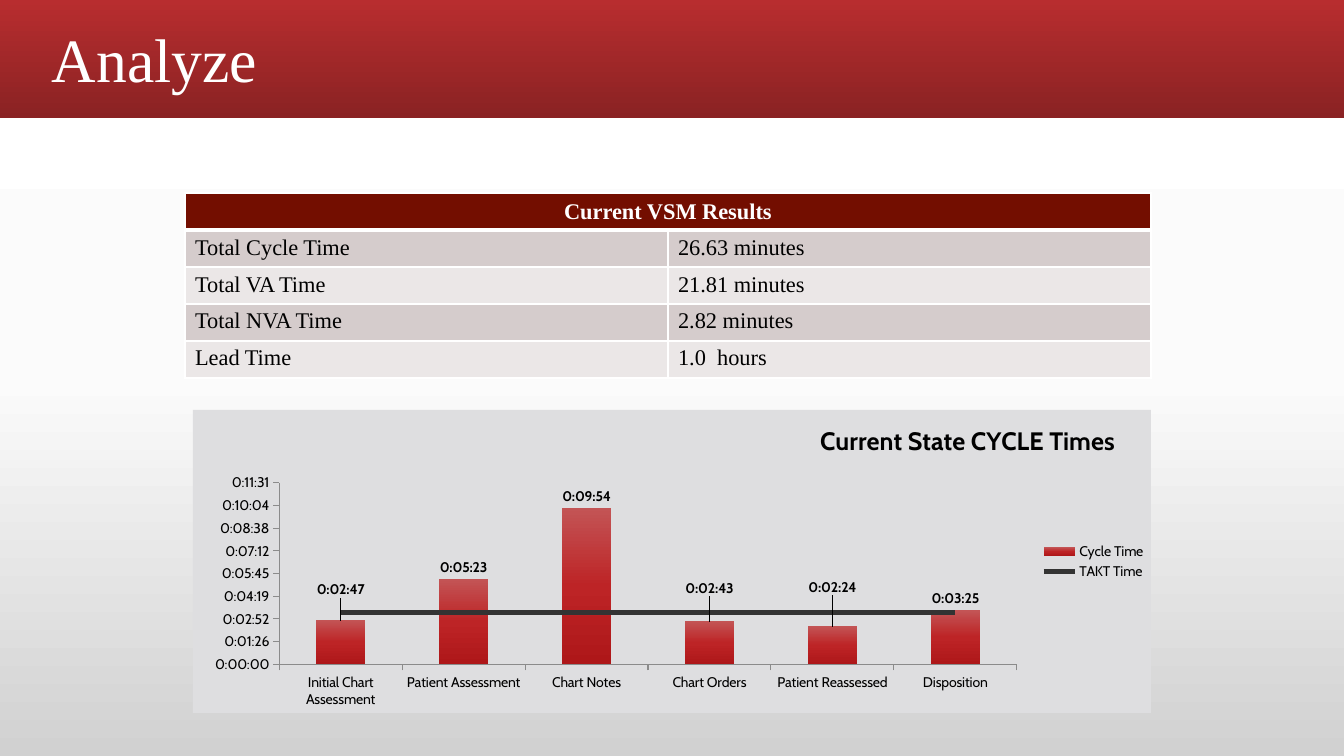
from dataclasses import dataclass

from pptx import Presentation
from pptx.chart.data import CategoryChartData
from pptx.dml.color import RGBColor
from pptx.enum.chart import XL_CHART_TYPE as ChartType
from pptx.enum.chart import XL_LABEL_POSITION as LabelPosition
from pptx.enum.chart import XL_LEGEND_POSITION as LegendPosition
from pptx.enum.chart import XL_MARKER_STYLE as MarkerStyle
from pptx.enum.chart import XL_TICK_MARK as TickMark
from pptx.enum.shapes import MSO_SHAPE as Preset
from pptx.enum.text import MSO_ANCHOR as Anchor
from pptx.enum.text import PP_ALIGN as Align
from pptx.oxml import parse_xml
from pptx.oxml.ns import nsdecls, qn
from pptx.util import Emu, Pt

SERIF = "Times New Roman"
SANS = "Cabin"
TIME_FORMAT = "h:mm:ss;@"
TAKT = 0.0023


@dataclass(frozen=True)
class Result:
    measure: str
    value: str
    band: str


@dataclass(frozen=True)
class Step:
    name: str
    cycle: float
    label_lift: float = 0


RESULTS = [
    Result("Total Cycle Time", "26.63 minutes", "D5CCCC"),
    Result("Total VA Time", "21.81 minutes", "EBE7E7"),
    Result("Total NVA Time", "2.82 minutes", "D5CCCC"),
    Result("Lead Time", "1.0  hours", "EBE7E7"),
]
STEPS = [
    Step("Initial Chart Assessment", 0.001944, 0.06),
    Step("Patient Assessment", 0.003743),
    Step("Chart Notes", 0.006878),
    Step("Chart Orders", 0.001887, 0.07),
    Step("Patient Reassessed", 0.00167, 0.09),
    Step("Disposition", 0.002377),
]


def px(length: int) -> Emu:
    return Emu(round(length * 914400 / 100.8))


def color(code: str) -> RGBColor:
    return RGBColor.from_string(code)


def paint_gradient(fill, owner, *stops: tuple[int, str]) -> None:
    fill.gradient()
    fill.gradient_angle = 270
    stop_list = next(owner.iter(qn("a:gsLst")))
    for old in list(stop_list):
        stop_list.remove(old)
    for percent, code in stops:
        stop_list.append(parse_xml(
            f'<a:gs {nsdecls("a")} pos="{percent * 1000}"><a:srgbClr val="{code}"/></a:gs>'))


def style_font(font, size: int, face: str, code: str = "000000", bold: bool = False) -> None:
    font.size = Pt(size)
    font.name = face
    font.bold = bold
    font.color.rgb = color(code)


def write(frame, text: str, *, size: int, face: str = SERIF, code: str = "000000",
          bold: bool = False, align=None, spacing=None) -> None:
    paragraph = frame.paragraphs[0]
    paragraph.alignment = align
    paragraph.line_spacing = spacing
    run = paragraph.add_run()
    run.text = text
    style_font(run.font, size, face, code, bold)


def place(element, index: int, **edges: float) -> None:
    for old in element.findall(qn("c:layout")):
        element.remove(old)
    is_plot = element.tag == qn("c:plotArea")
    target = '<c:layoutTarget val="inner"/>' if is_plot else ""
    is_label = element.tag == qn("c:dLbl")
    modes = "" if is_label else '<c:xMode val="edge"/><c:yMode val="edge"/>'
    values = "".join(f'<c:{edge} val="{value}"/>' for edge, value in edges.items())
    element.insert(index, parse_xml(
        f'<c:layout {nsdecls("c")}><c:manualLayout>{target}{modes}{values}'
        f'</c:manualLayout></c:layout>'))


def border(cell, **widths: int) -> None:
    properties = cell._tc.get_or_add_tcPr()
    for index, side in enumerate("LRTB"):
        width = Pt(widths.get(side, 1))
        properties.insert(index, parse_xml(
            f'<a:ln{side} {nsdecls("a")} w="{width}"><a:solidFill>'
            f'<a:srgbClr val="FFFFFF"/></a:solidFill></a:ln{side}>'))


def fill_cell(cell, code: str, **widths: int) -> None:
    cell.fill.solid()
    cell.fill.fore_color.rgb = color(code)
    border(cell, **widths)


def add_header(slide) -> None:
    banner = slide.shapes.add_shape(Preset.RECTANGLE, 0, 0, px(1344), px(118))
    banner.shadow.inherit = False
    banner.line.fill.background()
    paint_gradient(banner.fill, banner.element, (0, "B82D2F"), (100, "8A2223"))
    heading = slide.shapes.add_textbox(px(42), px(11), px(1184), px(90)).text_frame
    heading.word_wrap = True
    heading.vertical_anchor = Anchor.BOTTOM
    write(heading, "Analyze", size=44, code="FFFFFF", spacing=0.9)


def add_results(slide) -> None:
    rows = len(RESULTS) + 1
    results = slide.shapes.add_table(rows, 2, px(185), px(193), px(966), px(37 * rows)).table
    results.first_row = results.horz_banding = False
    heading = results.cell(0, 0)
    heading.merge(results.cell(0, 1))
    heading.vertical_anchor = Anchor.MIDDLE
    for column in range(2):
        fill_cell(results.cell(0, column), "730E00", B=3)
    write(heading.text_frame, "Current VSM Results", size=16, code="FFFFFF",
          bold=True, align=Align.CENTER)
    for row, result in enumerate(RESULTS, 1):
        for column, text in enumerate((result.measure, result.value)):
            cell = results.cell(row, column)
            fill_cell(cell, result.band, T=3 if row == 1 else 1)
            write(cell.text_frame, text, size=16)


def split_takt_line(chart) -> None:
    bars = next(chart.element.iter(qn("c:barChart")))
    takt = bars.findall(qn("c:ser"))[1]
    for bar_only in takt.findall(qn("c:invertIfNegative")):
        takt.remove(bar_only)
    line = parse_xml(
        f'<c:lineChart {nsdecls("c")}><c:grouping val="standard"/>'
        f'<c:varyColors val="0"/><c:marker val="1"/></c:lineChart>')
    line.insert(2, takt)
    for axis in bars.findall(qn("c:axId")):
        line.append(parse_xml(f'<c:axId {nsdecls("c")} val="{axis.get("val")}"/>'))
    bars.addnext(line)


def label_cycles(cycle) -> None:
    labels = cycle.data_labels
    labels.show_value = True
    labels.number_format = TIME_FORMAT
    labels.number_format_is_linked = False
    labels.position = LabelPosition.OUTSIDE_END
    style_font(labels.font, 10, SANS, bold=True)
    lifted = [(index, step) for index, step in enumerate(STEPS) if step.label_lift]
    for index, step in lifted:
        label = cycle.points[index].data_label
        style_font(label.font, 10, SANS, bold=True)
        label.position = LabelPosition.OUTSIDE_END
    for (_, step), element in zip(lifted, list(cycle._element.iter(qn("c:dLbl")))):
        place(element, 1, x=0, y=-step.label_lift)
        element.insert(2, parse_xml(
            f'<c:numFmt {nsdecls("c")} formatCode="{TIME_FORMAT}" sourceLinked="0"/>'))


def add_cycle_times(slide) -> None:
    data = CategoryChartData(number_format=TIME_FORMAT)
    data.categories = [step.name for step in STEPS]
    data.add_series("Cycle Time", [step.cycle for step in STEPS])
    data.add_series("TAKT Time", [TAKT] * len(STEPS))
    chart = slide.shapes.add_chart(ChartType.COLUMN_CLUSTERED, px(193), px(410),
                                   px(958), px(303), data).chart
    style_font(chart.font, 10, SANS)
    chart.element.find(qn("c:chart")).addnext(parse_xml(
        f'<c:spPr {nsdecls("c", "a")}><a:solidFill><a:srgbClr val="DEDEE0"/></a:solidFill>'
        f'<a:ln><a:noFill/></a:ln></c:spPr>'))
    split_takt_line(chart)

    bars, takt_plot = chart.plots
    bars.gap_width = 150
    bars.vary_by_categories = False
    cycle, takt = bars.series[0], takt_plot.series[0]
    paint_gradient(cycle.format.fill, cycle._element,
                   (0, "C35455"), (50, "BD2426"), (100, "AE1719"))
    label_cycles(cycle)
    takt.smooth = False
    takt.marker.style = MarkerStyle.NONE
    takt.format.line.width = Pt(3.5)
    takt.format.line.color.rgb = color("333333")

    for axis in (chart.category_axis, chart.value_axis):
        axis.has_major_gridlines = False
        axis.major_tick_mark = TickMark.OUTSIDE
        axis.format.line.color.rgb = color("8B8B8B")
    times = chart.value_axis
    times.minimum_scale, times.maximum_scale, times.major_unit = 0, 0.008, 0.001
    times.tick_labels.number_format = TIME_FORMAT
    times.tick_labels.number_format_is_linked = False

    chart.has_title = True
    write(chart.chart_title.text_frame, "Current State CYCLE Times",
          size=18, face=SANS, bold=True)
    chart.has_legend = True
    chart.legend.position = LegendPosition.RIGHT
    chart.legend.include_in_layout = False
    place(chart.chart_title._element, 1, x=0.65, y=0.03)
    place(chart.legend._element, 1, x=0.88, y=0.43, w=0.12, h=0.14)
    place(next(chart.element.iter(qn("c:plotArea"))), 0, x=0.09, y=0.24, w=0.77, h=0.6)


def main() -> None:
    deck = Presentation()
    deck.slide_width, deck.slide_height = px(1344), px(756)
    slide = deck.slides.add_slide(deck.slide_layouts[6])
    paint_gradient(slide.background.fill, slide.element,
                   (0, "FFFFFF"), (50, "FBFBFB"), (100, "D1D1D1"))
    add_header(slide)
    add_results(slide)
    add_cycle_times(slide)
    deck.save("out.pptx")


if __name__ == "__main__":
    main()
